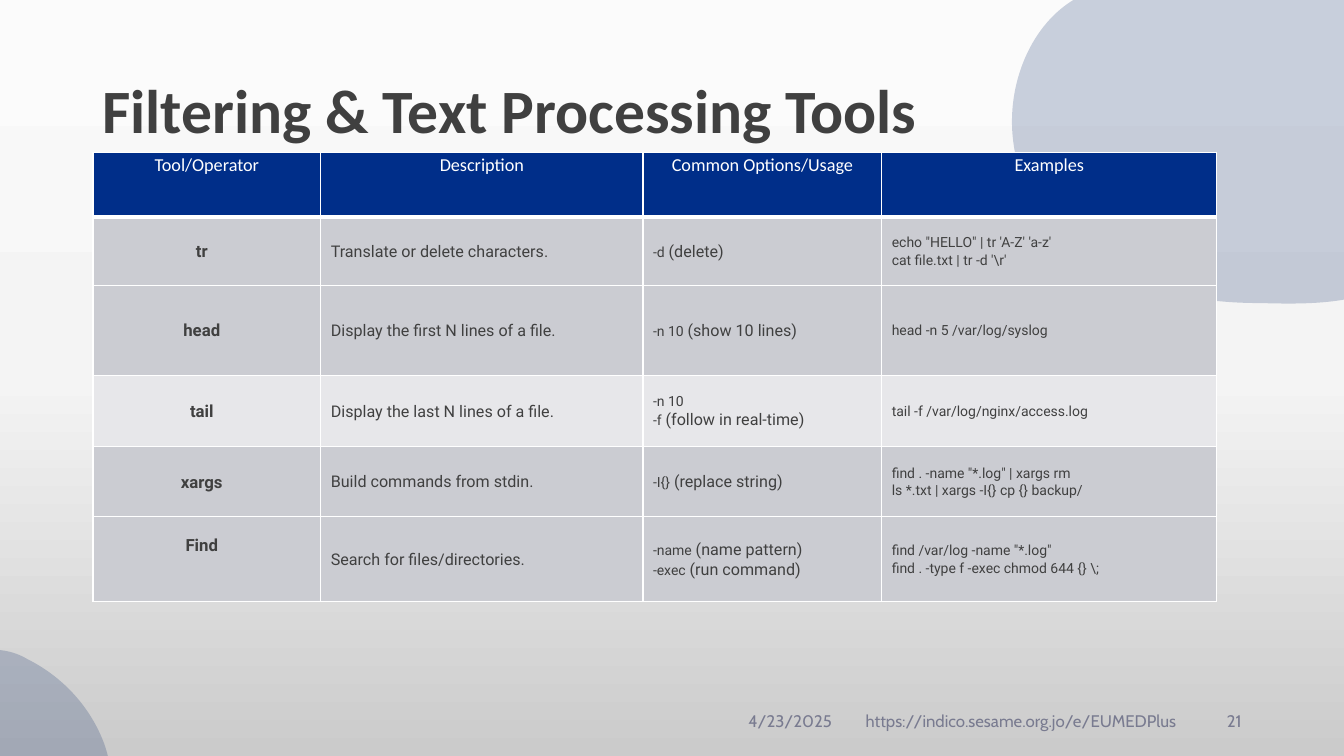
from copy import deepcopy
from dataclasses import dataclass
from typing import Any, NamedTuple

from lxml.etree import SubElement
from pptx import Presentation
from pptx.dml.color import RGBColor
from pptx.enum.text import MSO_ANCHOR, MSO_AUTO_SIZE, PP_ALIGN
from pptx.oxml import parse_xml
from pptx.oxml.ns import nsdecls, qn
from pptx.slide import Slide
from pptx.util import Pt

NAVY = RGBColor(0x00, 0x20, 0x60)
HEADER_BLUE = RGBColor(0x00, 0x2E, 0x89)
CHARCOAL = RGBColor(0x40, 0x40, 0x40)
SLATE = RGBColor(0x79, 0x7B, 0x90)
WHITE = RGBColor(0xFF, 0xFF, 0xFF)
BAND_DARK = RGBColor(0xCB, 0xCC, 0xD2)
BAND_LIGHT = RGBColor(0xE7, 0xE7, 0xEA)
BACKDROP = ((0, RGBColor(0xFB, 0xFB, 0xFB)), (0.5, RGBColor(0xF4, 0xF4, 0xF4)),
            (1, RGBColor(0xCB, 0xCB, 0xCB)))

TITLE_FONT = {"name": "Calibri", "size": Pt(44), "bold": True}
FOOTER_FONT = {"name": "Cabin", "size": Pt(12)}
HEADER_FONT = {"name": "Calibri", "size": Pt(13), "bold": False}
TOOL_FONT = {"name": "Roboto", "size": Pt(12), "bold": True}
PROSE_FONT = {"name": "Roboto", "size": Pt(11.5), "bold": False}
CODE_FONT = {"name": "Roboto", "size": Pt(10), "bold": False}

BLOB_GRID = {"w": "329", "h": "272"}
BLOB_START = (50, 251)
BLOB_CURVES = (
    ((23, 221), (1, 184), (0, 144)),
    ((-1, 104), (20, 61), (58, 48)),
    ((84, 38), (112, 43), (138, 34)),
    ((166, 24), (189, -2), (220, 0)),
    ((229, 1), (238, 4), (246, 9)),
    ((281, 27), (308, 58), (321, 95)),
    ((333, 132), (331, 174), (314, 210)),
    ((307, 225), (296, 240), (281, 251)),
    ((253, 272), (214, 272), (178, 271)),
    ((150, 271), (122, 268), (96, 258)),
    ((83, 253), (63, 255), BLOB_START),
)


class Blob(NamedTuple):
    left: float
    top: float
    width: float
    height: float


class FooterPart(NamedTuple):
    text: str
    left: float
    width: float
    align: PP_ALIGN


@dataclass
class Tool:
    name: str
    description: str
    options: tuple[tuple[str, str], ...]
    examples: tuple[str, ...]
    height: float
    band: RGBColor = BAND_DARK
    name_bottom: float = 7.2


Line = tuple[tuple[str, dict[str, Any]], ...]

BLOBS = (Blob(722.9, -54.7, 329, 272.2), Blob(-161.3, 464.4, 241.9, 193.7))
FOOTER = (
    FooterPart("4/23/2025", 527.4, 77, PP_ALIGN.LEFT),
    FooterPart("https://indico.sesame.org.jo/e/EUMEDPlus", 607, 244.8, PP_ALIGN.CENTER),
    FooterPart("21", 863, 31, PP_ALIGN.RIGHT),
)
HEADINGS = ("Tool/Operator", "Description", "Common Options/Usage", "Examples")
HEADER_HEIGHT = 46.1
COLUMN_WIDTHS = (162.7, 230.2, 170.6, 239.3)
TOOLS = (
    Tool("tr", "Translate or delete characters.", (("-d", " (delete)"),),
         ("echo \"HELLO\" | tr 'A-Z' 'a-z'", r"cat file.txt | tr -d '\r'"), 49),
    Tool("head", "Display the first N lines of a file.", (("-n 10", " (show 10 lines)"),),
         ("head -n 5 /var/log/syslog",), 64.3),
    Tool("tail", "Display the last N lines of a file.",
         (("-n 10", ""), ("-f", " (follow in real-time)")),
         ("tail -f /var/log/nginx/access.log",), 50.8, BAND_LIGHT),
    Tool("xargs", "Build commands from stdin.", (("-I{}", " (replace string)"),),
         ('find . -name "*.log" | xargs rm', "ls *.txt | xargs -I{} cp {} backup/"), 50.1),
    Tool("Find", "Search for files/directories.",
         (("-name", " (name pattern)"), ("-exec", " (run command)")),
         ('find /var/log -name "*.log"', r"find . -type f -exec chmod 644 {} \;"), 60.8,
         name_bottom=27.2),
)


def apply_format(target: Any, values: dict[str, Any]) -> None:
    for attribute, value in values.items():
        setattr(target, attribute, value)


def write_lines(paragraph: Any, lines: tuple[Line, ...], color: RGBColor) -> None:
    for number, line in enumerate(lines):
        if number:
            paragraph.add_line_break()
        for text, font_format in line:
            if text:
                run = paragraph.add_run()
                run.text = text
                apply_format(run.font, font_format)
                run.font.color.rgb = color


def paint_backdrop(slide: Slide) -> None:
    fill = slide.background.fill
    fill.gradient()
    fill.gradient_angle = 270
    stop_list = slide.element.find(".//" + qn("a:gsLst"))
    stop_list.append(deepcopy(stop_list[0]))
    for stop, (position, color) in zip(fill.gradient_stops, BACKDROP):
        stop.position = position
        stop.color.rgb = color


def draw_blob(slide: Slide, blob: Blob) -> None:
    builder = slide.shapes.build_freeform(*BLOB_START, scale=float(Pt(1)))
    builder.add_line_segments([curve[-1] for curve in BLOB_CURVES], close=True)
    shape = builder.convert_to_shape()
    apply_format(shape, {side: Pt(value) for side, value in blob._asdict().items()})
    outline = shape.element.spPr.find(".//" + qn("a:path"))
    outline.attrib.update(BLOB_GRID)
    for segment, curve in zip(outline.findall(qn("a:lnTo")), BLOB_CURVES):
        points = "".join(f'<a:pt x="{x}" y="{y}"/>' for x, y in curve)
        outline.replace(segment, parse_xml(
            f'<a:cubicBezTo {nsdecls("a")}>{points}</a:cubicBezTo>'))
    shape.shadow.inherit = False
    shape.line.fill.background()
    shape.fill.solid()
    shape.fill.fore_color.rgb = NAVY
    color = shape.element.spPr.find(".//" + qn("a:srgbClr"))
    SubElement(color, qn("a:alpha"), val="20000")


def write_title(slide: Slide) -> None:
    title = slide.shapes.title
    apply_format(title, {"left": Pt(66), "top": Pt(28.8), "width": Pt(828), "height": Pt(104.4)})
    apply_format(title.text_frame, {"vertical_anchor": MSO_ANCHOR.MIDDLE, "word_wrap": True,
                                    "auto_size": MSO_AUTO_SIZE.NONE})
    paragraph = title.text_frame.paragraphs[0]
    apply_format(paragraph, {"alignment": PP_ALIGN.LEFT, "line_spacing": 0.9})
    write_lines(paragraph, ((("Filtering & Text Processing Tools", TITLE_FONT),),), CHARCOAL)
    title.element.getparent().append(title.element)


def write_footer(slide: Slide, part: FooterPart) -> None:
    box = slide.shapes.add_textbox(Pt(part.left), Pt(500.4), Pt(part.width), Pt(28.8))
    apply_format(box.text_frame, {"word_wrap": True, "vertical_anchor": MSO_ANCHOR.MIDDLE})
    paragraph = box.text_frame.paragraphs[0]
    paragraph.alignment = part.align
    write_lines(paragraph, (((part.text, FOOTER_FONT),),), SLATE)


def fill_cell(cell: Any, lines: tuple[Line, ...], color: RGBColor, band: RGBColor,
              cell_format: dict[str, Any], paragraph_format: dict[str, Any],
              top: float = 1, bottom: float = 1) -> None:
    apply_format(cell, cell_format)
    cell.fill.solid()
    cell.fill.fore_color.rgb = band
    properties = cell._tc.get_or_add_tcPr()
    for index, (side, width) in enumerate((("L", 1), ("R", 1), ("T", top), ("B", bottom))):
        properties.insert(index, parse_xml(
            f'<a:ln{side} {nsdecls("a")} w="{Pt(width)}"><a:solidFill>'
            f'<a:srgbClr val="{WHITE}"/></a:solidFill></a:ln{side}>'))
    paragraph = cell.text_frame.paragraphs[0]
    apply_format(paragraph, {"line_spacing": 1.07} | paragraph_format)
    write_lines(paragraph, lines, color)


def draw_table(slide: Slide) -> None:
    heights = (HEADER_HEIGHT, *(tool.height for tool in TOOLS))
    table = slide.shapes.add_table(len(heights), len(HEADINGS), Pt(66.4), Pt(108.8),
                                   Pt(sum(COLUMN_WIDTHS)), Pt(sum(heights))).table
    table.horz_banding = False
    for column, width in zip(table.columns, COLUMN_WIDTHS):
        column.width = Pt(width)
    for row, height in zip(table.rows, heights):
        row.height = Pt(height)
    margins = ("margin_left", "margin_top", "margin_right", "margin_bottom")
    header_cell = dict.fromkeys(margins, Pt(0)) | {"vertical_anchor": MSO_ANCHOR.TOP}
    body_cell = dict.fromkeys(margins, Pt(7.2)) | {"vertical_anchor": MSO_ANCHOR.MIDDLE}
    for index, heading in enumerate(HEADINGS):
        fill_cell(table.cell(0, index), (((heading, HEADER_FONT),),), WHITE, HEADER_BLUE,
                  header_cell, {"alignment": PP_ALIGN.CENTER, "space_after": Pt(8)}, bottom=3)
    for number, tool in enumerate(TOOLS, 1):
        contents = (
            (((tool.name, TOOL_FONT),),),
            (((tool.description, PROSE_FONT),),),
            tuple(((flag, CODE_FONT), (note, PROSE_FONT)) for flag, note in tool.options),
            tuple(((example, CODE_FONT),) for example in tool.examples),
        )
        name_cell = body_cell | {"margin_left": Pt(0), "margin_bottom": Pt(tool.name_bottom)}
        for index, lines in enumerate(contents):
            fill_cell(table.cell(number, index), lines, CHARCOAL, tool.band,
                      body_cell if index else name_cell,
                      {"alignment": PP_ALIGN.LEFT if index else PP_ALIGN.CENTER},
                      top=3 if number == 1 else 1)


def main() -> None:
    deck = Presentation()
    apply_format(deck, {"slide_width": Pt(960), "slide_height": Pt(540)})
    slide = deck.slides.add_slide(deck.slide_layouts[5])
    paint_backdrop(slide)
    for blob in BLOBS:
        draw_blob(slide, blob)
    write_title(slide)
    for part in FOOTER:
        write_footer(slide, part)
    draw_table(slide)
    deck.save("out.pptx")


if __name__ == "__main__":
    main()
